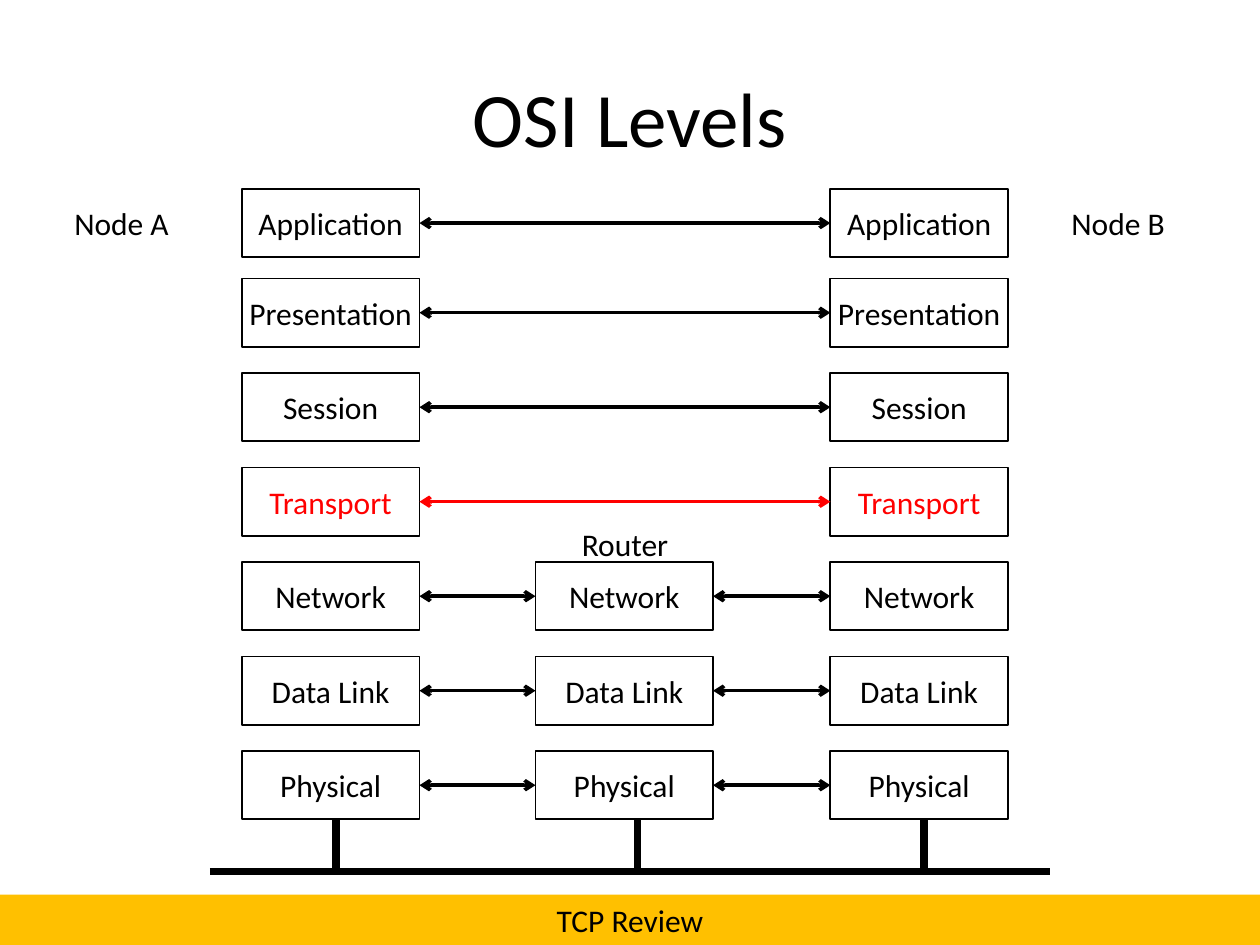
from lxml import etree
from pptx import Presentation
from pptx.dml.color import RGBColor
from pptx.enum.shapes import MSO_CONNECTOR, MSO_SHAPE
from pptx.enum.text import MSO_ANCHOR, PP_ALIGN
from pptx.oxml.ns import qn
from pptx.util import Pt

RECT = MSO_SHAPE.RECTANGLE
STRAIGHT = MSO_CONNECTOR.STRAIGHT
CENTER = PP_ALIGN.CENTER
MIDDLE = MSO_ANCHOR.MIDDLE

BLACK, WHITE, RED, AMBER = "000000", "FFFFFF", "FF0000", "FFC000"
FONT = "Calibri"
TITLE = "OSI Levels"
FOOTER = "TCP Review"
LEVELS = ["Application", "Presentation", "Session", "Transport",
          "Network", "Data Link", "Physical"]
ROUTED = LEVELS[4:]
HIGHLIGHT = "Transport"
LABELS = [("Node A", 18.7, 108), ("Node B", 588.2, 108), ("Router", 306.4, 291.6)]

BOX_W, BOX_H = 101.5, 39
NODE_A_X, ROUTER_X, NODE_B_X = 138.2, 306, 474.5
FIRST_TOP, SECOND_TOP, STEP = 108, 159.2, 54
CABLE_X1, CABLE_X2, CABLE_Y = 120, 600, 498
DROPS = [192, 364.3, 528]


def color(value):
    return RGBColor.from_string(value)


def write(sp, text, size=18, ink=BLACK, wrap=False):
    tf = sp.text_frame
    tf.word_wrap = wrap
    tf.vertical_anchor = MIDDLE
    p = tf.paragraphs[0]
    p.alignment = CENTER
    r = p.add_run()
    r.text = text
    r.font.name = FONT
    r.font.size = Pt(size)
    r.font.color.rgb = color(ink)


def label(s, text, x, y, w=BOX_W, h=BOX_H, **fmt):
    write(s.shapes.add_textbox(Pt(x), Pt(y), Pt(w), Pt(h)), text, **fmt)


def box(s, text, x, y, w=BOX_W, h=BOX_H, fill=WHITE, line=BLACK, **fmt):
    sp = s.shapes.add_shape(RECT, Pt(x), Pt(y), Pt(w), Pt(h))
    sp.shadow.inherit = False
    sp.fill.solid()
    sp.fill.fore_color.rgb = color(fill)
    if line:
        sp.line.color.rgb = color(line)
        sp.line.width = Pt(1)
    else:
        sp.line.fill.background()
    write(sp, text, **fmt)
    return sp


def line(s, x1, y1, x2, y2, ink=BLACK, width=4.5):
    c = s.shapes.add_connector(STRAIGHT, Pt(x1), Pt(y1), Pt(x2), Pt(y2))
    c.line.color.rgb = color(ink)
    c.line.width = Pt(width)
    etree.SubElement(c._element.spPr, qn("a:effectLst"))
    return c


def link(s, left, right, ink):
    c = line(s, 0, 0, 0, 0, ink, 2)
    c.begin_connect(left, 3)
    c.end_connect(right, 1)
    ln = c.line._get_or_add_ln()
    for end in ("a:headEnd", "a:tailEnd"):
        etree.SubElement(ln, qn(end), type="arrow")


def main():
    prs = Presentation()
    prs.slide_width, prs.slide_height = Pt(720), Pt(540)
    s = prs.slides.add_slide(prs.slide_layouts[6])

    label(s, TITLE, 36, 21.6, 648, 90, size=44, wrap=True)
    box(s, FOOTER, 0, 511.2, 720, 28.8, fill=AMBER, line=None, wrap=True)

    for i, level in enumerate(LEVELS):
        y = SECOND_TOP + (i - 1) * STEP if i else FIRST_TOP
        ink = RED if level == HIGHLIGHT else BLACK
        xs = [NODE_A_X, ROUTER_X, NODE_B_X] if level in ROUTED else [NODE_A_X, NODE_B_X]
        row = [box(s, level, x, y, ink=ink) for x in xs]
        for left, right in zip(row, row[1:]):
            link(s, left, right, ink)

    line(s, CABLE_X1, CABLE_Y, CABLE_X2, CABLE_Y)
    for x in DROPS:
        line(s, x, 468, x, CABLE_Y)

    for text, x, y in LABELS:
        label(s, text, x, y)

    prs.save("out.pptx")


if __name__ == "__main__":
    main()
